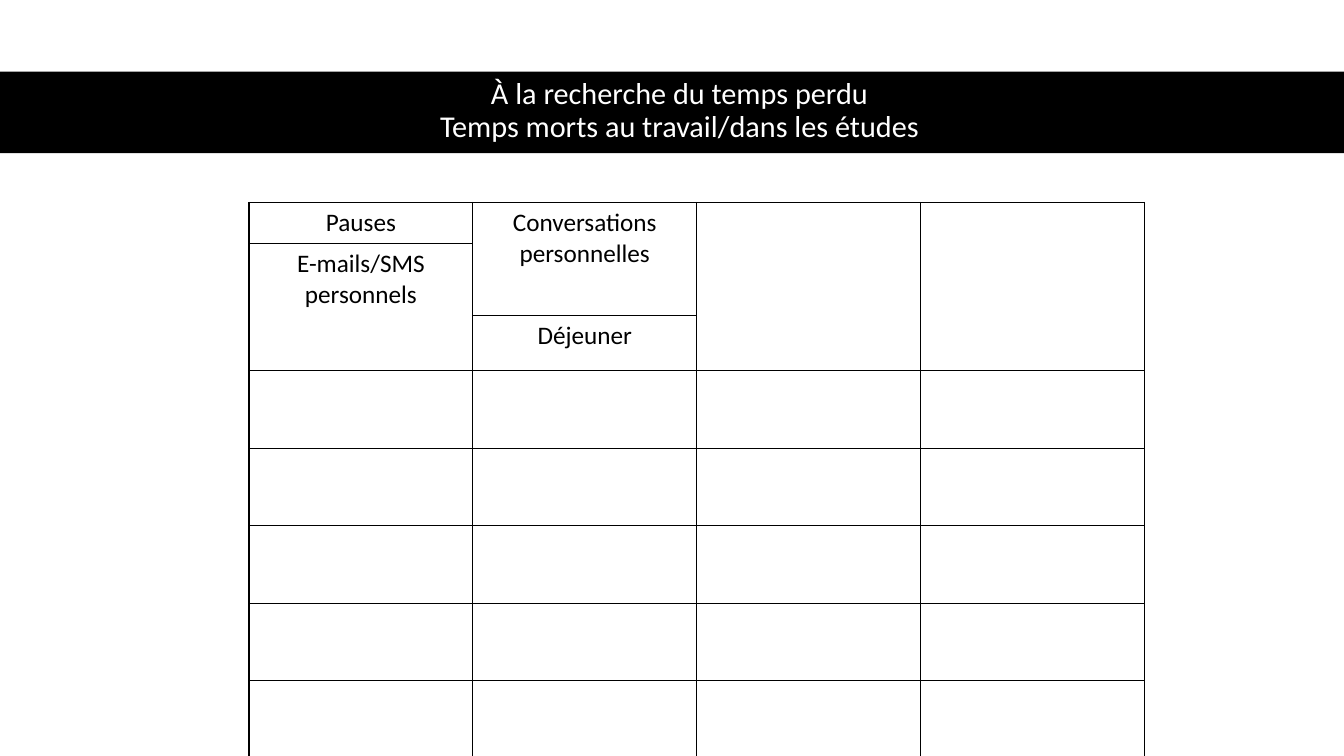
import pptx
import pptx.util
import pptx.dml.color
import pptx.enum.shapes
import pptx.enum.text
from lxml import etree

Inches, Pt = pptx.util.Inches, pptx.util.Pt
ALIGN = pptx.enum.text.PP_ALIGN
COLORS = {"ink": "000000", "title": "FFFFFF"}
FONT = "Calibri"

TITLE = "À la recherche du temps perdu\vTemps morts au travail/dans les études"
LABELS = {
    (0, 0): "Pauses",
    (1, 0): "E-mails/SMS personnels",
    (0, 1): "Conversations personnelles",
    (2, 1): "Déjeuner",
}
MERGES = [((0, 1), (1, 1)), ((0, 2), (2, 2)), ((0, 3), (2, 3)), ((1, 0), (2, 0))]
COLUMN_COUNT, COLUMN_WIDTH = 4, 2.22
ROW_HEIGHTS = [0.38, 0.15, 0.55] + [0.77] * 5


def color(name):
    return pptx.dml.color.RGBColor.from_string(COLORS[name])


def style(para, size, color_name):
    para.alignment = ALIGN.CENTER
    para.font.name = FONT
    para.font.size = Pt(size)
    para.font.color.rgb = color(color_name)


def add_borders(cell):
    properties = cell._tc.get_or_add_tcPr()
    for place, side in enumerate("LRTB"):
        line = etree.Element(pptx.oxml.ns.qn(f"a:ln{side}"), w=str(Pt(1)))
        fill = etree.SubElement(line, pptx.oxml.ns.qn("a:solidFill"))
        etree.SubElement(fill, pptx.oxml.ns.qn("a:srgbClr"), val=COLORS["ink"])
        properties.insert(place, line)


def add_title(page):
    title = page.shapes.title
    title.left, title.top = Inches(0.61), Inches(0.7)
    title.width, title.height = Inches(12.26), Inches(0.81)
    frame = title.text_frame
    frame.text = TITLE
    frame.word_wrap = True
    frame.auto_size = pptx.enum.text.MSO_AUTO_SIZE.NONE
    frame.vertical_anchor = pptx.enum.text.MSO_ANCHOR.MIDDLE
    para = frame.paragraphs[0]
    para.line_spacing = 0.9
    style(para, 21.6, "title")

    band = page.shapes.add_shape(
        pptx.enum.shapes.MSO_SHAPE.RECTANGLE,
        0, Inches(0.71), Inches(13.33), Inches(0.81))
    band.shadow.inherit = False
    band.fill.solid()
    band.fill.fore_color.rgb = color("ink")
    band.line.fill.background()
    title.element.addprevious(band.element)  # band lies behind the title


def add_time_table(page):
    table = page.shapes.add_table(
        len(ROW_HEIGHTS), COLUMN_COUNT, Inches(2.47), Inches(2.01),
        Inches(COLUMN_COUNT * COLUMN_WIDTH), Inches(sum(ROW_HEIGHTS))).table
    table.first_row = table.horz_banding = False
    for column in table.columns:
        column.width = Inches(COLUMN_WIDTH)
    for row, height in zip(table.rows, ROW_HEIGHTS):
        row.height = Inches(height)
    for first, last in MERGES:
        table.cell(*first).merge(table.cell(*last))
    for cell in table.iter_cells():
        cell.fill.background()
        add_borders(cell)
    for position, label in LABELS.items():
        cell = table.cell(*position)
        cell.text = label
        style(cell.text_frame.paragraphs[0], 18, "ink")


def main():
    deck = pptx.Presentation()
    deck.slide_width, deck.slide_height = Inches(13.33), Inches(7.5)
    page = deck.slides.add_slide(deck.slide_layouts.get_by_name("Title Only"))
    add_title(page)
    add_time_table(page)
    deck.save("out.pptx")


if __name__ == "__main__":
    main()
